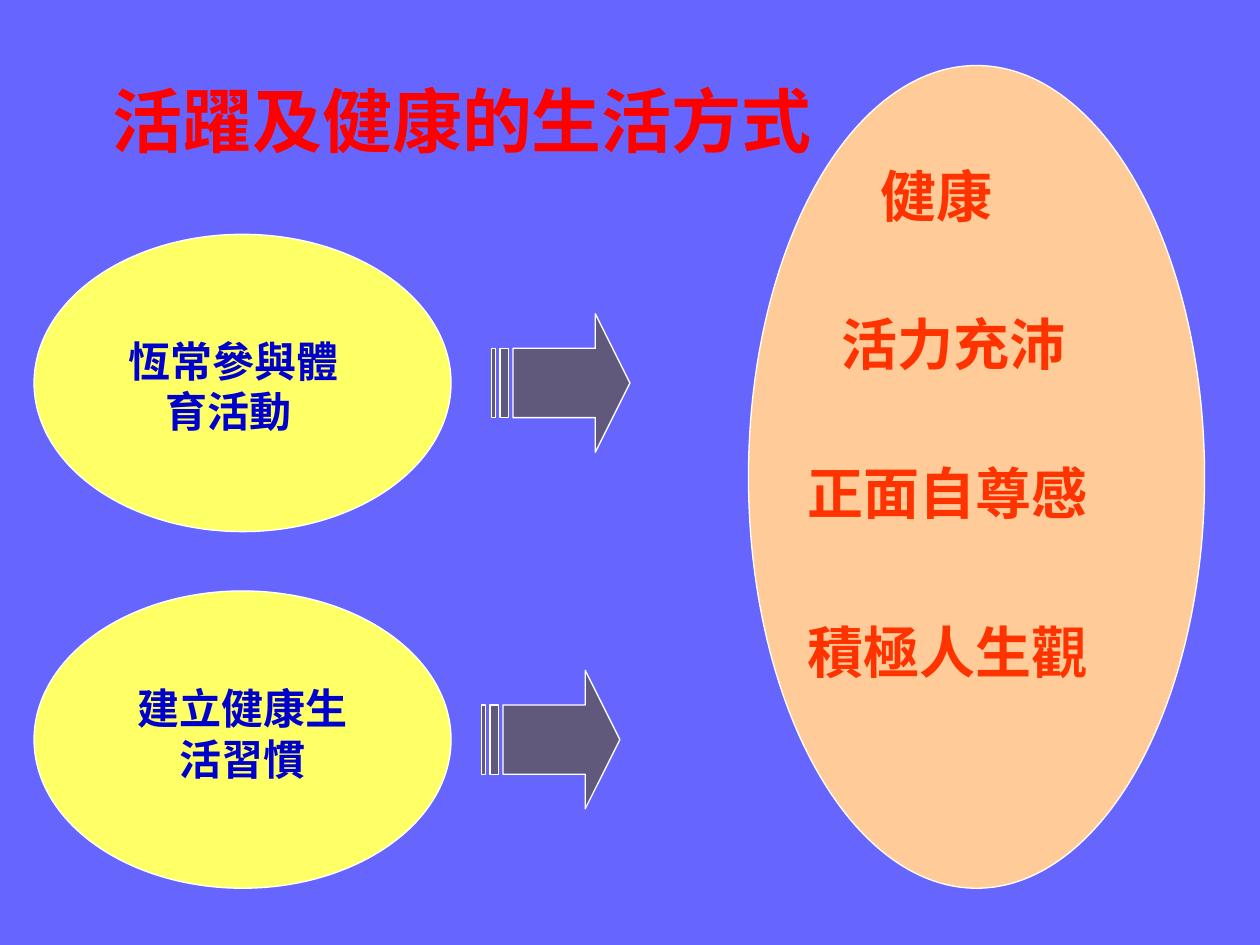
import pptx
import pptx.util
import pptx.dml.color
import pptx.enum.shapes
import pptx.enum.text

Inches = pptx.util.Inches
RGBColor = pptx.dml.color.RGBColor
MSO_SHAPE = pptx.enum.shapes.MSO_SHAPE
MSO_ANCHOR = pptx.enum.text.MSO_ANCHOR

BACKGROUND = RGBColor(0x66, 0x66, 0xFF)
WHITE = RGBColor(0xFF, 0xFF, 0xFF)
YELLOW = RGBColor(0xFF, 0xFF, 0x66)
PEACH = RGBColor(0xFF, 0xCC, 0x99)
GREY = RGBColor(0x60, 0x59, 0x7B)
RED = RGBColor(0xFF, 0x00, 0x00)
BLUE = RGBColor(0x00, 0x00, 0xCC)
ORANGE = RGBColor(0xFF, 0x33, 0x00)


def write_text(shape, text, size, color, anchor=MSO_ANCHOR.TOP):
    frame = shape.text_frame
    frame.word_wrap = True
    frame.vertical_anchor = anchor
    paragraph = frame.paragraphs[0]
    paragraph.alignment = pptx.enum.text.PP_ALIGN.CENTER
    run = paragraph.add_run()
    run.text = text
    run.font.name = "Arial"
    run.font.size = pptx.util.Pt(size)
    run.font.bold = True
    run.font.color.rgb = color


def add_filled_shape(kind, left, top, width, height, color):
    shape = slide.shapes.add_shape(
        kind, Inches(left), Inches(top), Inches(width), Inches(height))
    shape.shadow.inherit = False
    shape.fill.solid()
    shape.fill.fore_color.rgb = color
    shape.line.color.rgb = WHITE
    shape.line.width = pptx.util.Pt(0.75)
    return shape


presentation = pptx.Presentation()
presentation.slide_width = Inches(10)
presentation.slide_height = Inches(7.5)
slide = presentation.slides.add_slide(presentation.slide_layouts[5])
slide.background.fill.solid()
slide.background.fill.fore_color.rgb = BACKGROUND

title = slide.shapes.title
title.left, title.top = Inches(0.57), Inches(0.21)
title.width, title.height = Inches(6.32), Inches(1.48)
write_text(title, "活躍及健康的生活方式 ", size=40, color=RED, anchor=MSO_ANCHOR.MIDDLE)

habits = [
    ("恆常參與體育活動 ", 1.86, 0.83, 2.61, 3.9),
    ("建立健康生活習慣", 4.69, 0.9, 5.37, 3.82),
]
for text, oval_top, text_left, text_top, arrow_left in habits:
    add_filled_shape(MSO_SHAPE.OVAL, 0.27, oval_top, 3.31, 2.36, YELLOW)
    label = slide.shapes.add_textbox(
        Inches(text_left), Inches(text_top), Inches(2.05), Inches(0.9))
    write_text(label, text, size=24, color=BLUE)
    arrow = add_filled_shape(
        MSO_SHAPE.STRIPED_RIGHT_ARROW, arrow_left, oval_top + 0.63, 1.1, 1.1, GREY)
    arrow.adjustments[0] = 0.5
    arrow.adjustments[1] = 0.25

add_filled_shape(MSO_SHAPE.OVAL, 5.94, 0.52, 3.62, 6.53, PEACH)
benefits = [
    ("健康", 6.65, 1.23, 1.57),
    ("活力充沛", 6.5, 2.41, 2.13),
    ("正面自尊感", 6.18, 3.59, 2.68),
    ("積極人生觀", 6.1, 4.85, 2.84),
]
for text, left, top, width in benefits:
    label = slide.shapes.add_textbox(
        Inches(left), Inches(top), Inches(width), Inches(0.63))
    write_text(label, text, size=32, color=ORANGE)

presentation.save("out.pptx")
